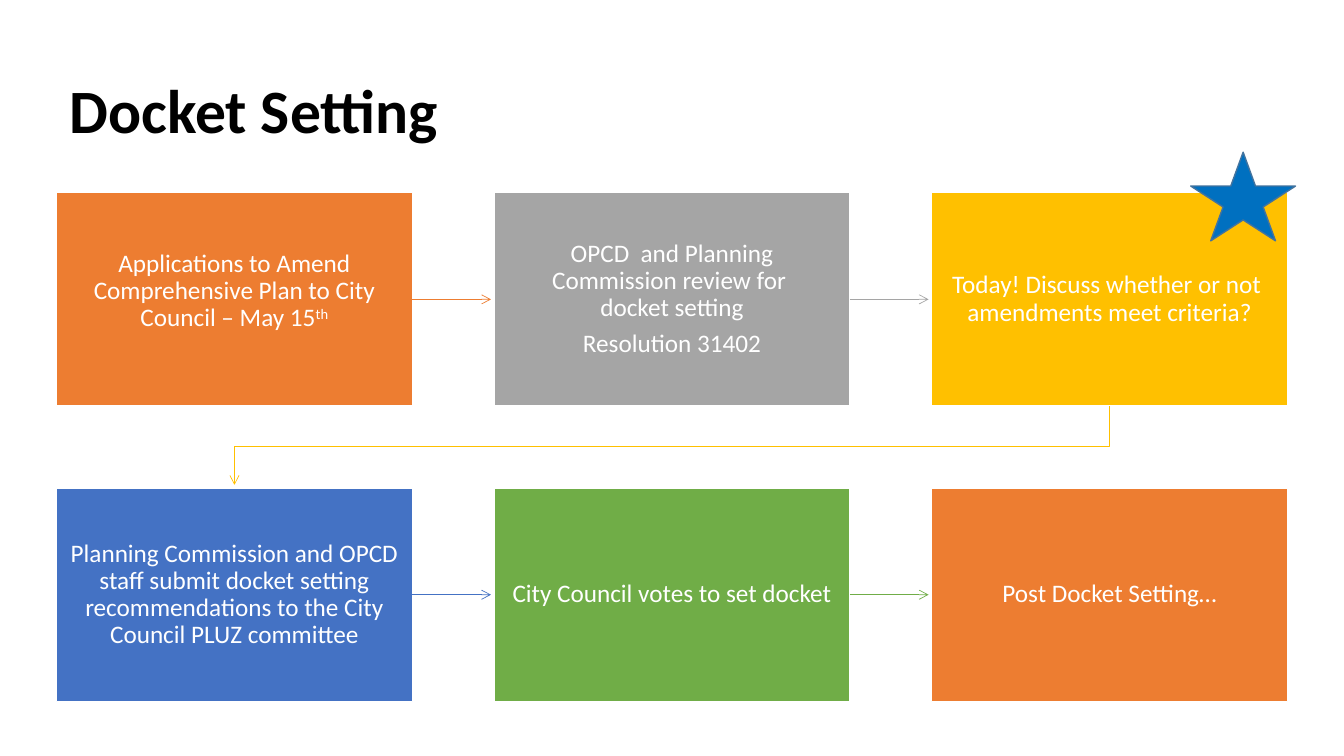
from lxml.etree import SubElement
from pptx import Presentation
from pptx.dml.color import RGBColor
from pptx.enum.shapes import MSO_CONNECTOR as Link, MSO_SHAPE as Shape
from pptx.enum.text import MSO_ANCHOR as Anchor, PP_ALIGN as Align
from pptx.oxml.ns import qn
from pptx.util import Inches, Pt


def paint(color, value):
    color.rgb = RGBColor.from_string(value)


def point(line, hue):
    """Style a line as a thin, shadowless open arrow."""
    paint(line.line.color, hue)
    line.line.width = Pt(0.5)
    SubElement(line.line._get_or_add_ln(), qn("a:tailEnd"), type="arrow")
    SubElement(line._element.spPr, qn("a:effectLst"))


LEFT, TOP, WIDE, HIGH = 0.56, 1.91, 3.53, 2.12
STEP, DROP = 4.34, 2.93
GAP = 0.03
STEPS = [
    ("ED7D31", ["Applications to Amend Comprehensive Plan to City Council – May 15"]),
    ("A5A5A5", ["OPCD  and Planning Commission review for \vdocket setting",
                "Resolution 31402"]),
    ("FFC000", ["Today! Discuss whether or not  amendments meet criteria?"]),
    ("4472C4", ["Planning Commission and OPCD staff submit docket setting "
                "recommendations to the City Council PLUZ committee"]),
    ("70AD47", ["City Council votes to set docket"]),
    ("ED7D31", ["Post Docket Setting…"]),
]
FRAME = {"word_wrap": True, "vertical_anchor": Anchor.MIDDLE}
FRAME.update({f"margin_{side}": Inches(0.14)
              for side in ("left", "top", "right", "bottom")})
PARA = {"alignment": Align.CENTER, "line_spacing": 0.9, "space_after": Pt(6.3)}
FONT = {"name": "Calibri", "size": Pt(18)}

deck = Presentation()
deck.slide_width, deck.slide_height = Inches(13.33), Inches(7.5)
slide = deck.slides.add_slide(deck.slide_layouts[5])
shapes = slide.shapes

# Title
title = shapes.title
place = {"left": 0.59, "top": 0.4, "width": 11.83, "height": 1.45}
for key, value in place.items():
    setattr(title, key, Inches(value))
title.text_frame.text = "Docket Setting"
title.text_frame.vertical_anchor = Anchor.MIDDLE
head = title.text_frame.paragraphs[0]
head.alignment, head.line_spacing = Align.LEFT, 0.9
for key, value in {"name": "Calibri", "size": Pt(44), "bold": True}.items():
    setattr(head.font, key, value)
paint(head.font.color, "000000")

# Process steps, three to a row, each with an arrow to the next
boxes = []
for i, (hue, texts) in enumerate(STEPS):
    row, col = divmod(i, 3)
    x, y = LEFT + col * STEP, TOP + row * DROP
    box = shapes.add_shape(Shape.RECTANGLE, Inches(x), Inches(y),
                           Inches(WIDE), Inches(HIGH))
    boxes.append(box)
    box.shadow.inherit = False
    box.fill.solid()
    paint(box.fill.fore_color, hue)
    paint(box.line.color, "FFFFFF")
    box.line.width = Pt(1)

    frame = box.text_frame
    for key, value in FRAME.items():
        setattr(frame, key, value)
    frame.text = "\n".join(texts)
    for para in frame.paragraphs:
        for key, value in PARA.items():
            setattr(para, key, value)
        for key, value in FONT.items():
            setattr(para.font, key, value)
        paint(para.font.color, "FFFFFF")

    if col < 2:
        mid = Inches(y + HIGH / 2)
        arrow = shapes.add_connector(Link.STRAIGHT, Inches(x + WIDE), mid,
                                     Inches(x + STEP - GAP), mid)
        point(arrow, hue)

# Raised date suffix in the first step, whose text sits above centre
first = boxes[0].text_frame
first.margin_bottom = Inches(0.3)
suffix = first.paragraphs[0].add_run()
suffix.text = "th"
suffix.font._element.set("baseline", "30000")

# Bent arrow from the end of the first row to the start of the second
start, end = LEFT + 2 * STEP + WIDE / 2, LEFT + WIDE / 2
base, turn, tip = TOP + HIGH, 4.43, TOP + DROP - GAP
path = shapes.build_freeform(Inches(start), Inches(base))
path.add_line_segments([(Inches(x), Inches(y)) for x, y in
                        ((start, turn), (end, turn), (end, tip))], close=False)
bend = path.convert_to_shape()
bend.fill.background()
point(bend, "FFC000")

# Star on the current step
star = shapes.add_shape(Shape.STAR_5_POINT, Inches(11.81), Inches(1.51),
                        Inches(1.04), Inches(0.88))
star.shadow.inherit = False
star.fill.solid()
paint(star.fill.fore_color, "0070C0")
paint(star.line.color, "43739E")
star.line.width = Pt(1)

deck.save("out.pptx")
